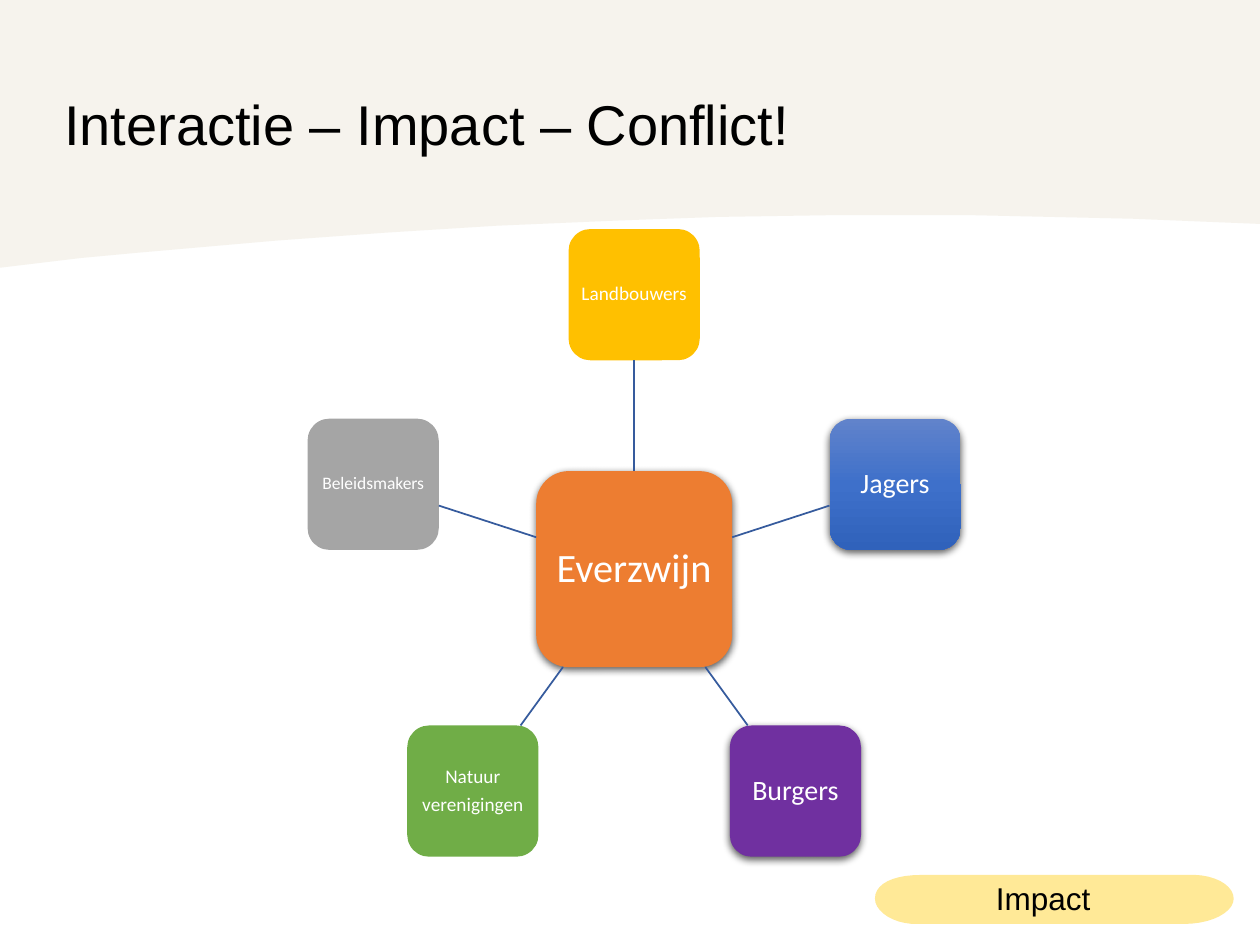
import copy
import math
from dataclasses import dataclass
from typing import Optional

import pptx
import pptx.dml.color
import pptx.enum.shapes
import pptx.enum.text
import pptx.oxml
import pptx.oxml.ns
import pptx.util

Pt = pptx.util.Pt
Point = tuple[float, float]
MIDDLE = pptx.enum.text.MSO_ANCHOR.MIDDLE


@dataclass(frozen=True)
class Theme:
    heading_font: str = "Arial"
    node_font: str = "Calibri"
    ink: str = "000000"
    node_ink: str = "FFFFFF"
    banner: str = "F6F3ED"
    badge: str = "FFE997"
    link: str = "365B9D"
    title_size: float = 32
    badge_size: float = 18
    hub_size: float = 23
    large: float = 16
    small: float = 11
    tiny: float = 10


@dataclass(frozen=True)
class Node:
    text: str
    fills: tuple[str, ...]  # one colour, or the stops of a vertical gradient
    text_size: float
    shadow: bool = False
    side: float = 75
    inset: float = 2


THEME = Theme()
CENTER: Point = (362.4, 325.2)
RADIUS = 156.8
HUB = Node("Everzwijn", ("ED7D31",), THEME.hub_size, True, side=112, inset=4)
NODES = (  # clockwise from the top
    Node("Landbouwers", ("FFC000",), THEME.small),
    Node("Jagers", ("6183CB", "3E70CA", "3062BB"), THEME.large, True),
    Node("Burgers", ("7030A0",), THEME.large, True),
    Node("Natuur\nverenigingen", ("70AD47",), THEME.small),
    Node("Beleidsmakers", ("A5A5A5",), THEME.tiny),
)
BANNER: list[Point] = [
    (0, 0), (720, 0), (720, 128), (647, 125), (556, 123), (474, 123),
    (410, 124), (354, 126), (284, 129), (220, 133), (158, 137.5),
    (78, 144.5), (46, 147.5), (0, 153),
]
BADGE_LEFT = (
    ((525, 528), (511, 528.5), (500, 521), (500, 513.5)),
    ((500, 513.5), (500, 505), (510.5, 500), (526, 500)),
)
BADGE_RIGHT = (
    ((678, 500), (693, 499), (705, 505.5), (705, 513.5)),
    ((705, 513.5), (705, 521), (693, 528), (676, 528)),
)


def rgb(color: str) -> pptx.dml.color.RGBColor:
    return pptx.dml.color.RGBColor.from_string(color)


def format_runs(p, size: float, font: str, color: str) -> None:
    for r in p.runs:
        r.font.size = Pt(size)
        r.font.name = font
        r.font.color.rgb = rgb(color)


def bezier(a: Point, b: Point, c: Point, d: Point, steps: int = 10) -> list[Point]:
    """Sample a cubic curve from a to d."""
    points = []
    for i in range(steps + 1):
        t = i / steps
        u = 1 - t
        weights = (u**3, 3 * u * u * t, 3 * u * t * t, t**3)
        points.append(tuple(sum(w * q[k] for w, q in zip(weights, (a, b, c, d)))
                            for k in (0, 1)))
    return points


def draw_outline(shapes, points: list[Point], color: str) -> None:
    corners = [(Pt(x), Pt(y)) for x, y in points]
    builder = shapes.build_freeform(*corners[0])
    builder.add_line_segments(corners[1:], close=True)
    sp = builder.convert_to_shape()
    sp.shadow.inherit = False
    sp.fill.solid()
    sp.fill.fore_color.rgb = rgb(color)
    sp.line.fill.background()


def fill_gradient(sp, colors: tuple[str, ...]) -> None:
    """Spread the colours evenly from top to bottom."""
    sp.fill.gradient()
    sp.fill.gradient_angle = 270
    stops = sp._element.spPr.find(".//" + pptx.oxml.ns.qn("a:gsLst"))
    while len(stops) < len(colors):
        stops.append(copy.deepcopy(stops[0]))
    for i, (stop, color) in enumerate(zip(sp.fill.gradient_stops, colors)):
        stop.color.rgb = rgb(color)
        stop.position = i / (len(colors) - 1)


def add_shadow(sp) -> None:
    effects = sp._element.spPr.find(pptx.oxml.ns.qn("a:effectLst"))
    effects.append(pptx.oxml.parse_xml(
        f'<a:outerShdw {pptx.oxml.ns.nsdecls("a")} blurRad="{Pt(4.5)}" '
        f'dist="{Pt(1.5)}" dir="5400000" algn="ctr" rotWithShape="0">'
        '<a:srgbClr val="000000"><a:alpha val="63000"/></a:srgbClr></a:outerShdw>'))


def draw_node(shapes, node: Node, center: Point):
    x, y = (v - node.side / 2 for v in center)
    sp = shapes.add_shape(pptx.enum.shapes.MSO_SHAPE.ROUNDED_RECTANGLE,
                          Pt(x), Pt(y), Pt(node.side), Pt(node.side))
    sp.shadow.inherit = False
    sp.line.fill.background()
    if len(node.fills) > 1:
        fill_gradient(sp, node.fills)
    else:
        sp.fill.solid()
        sp.fill.fore_color.rgb = rgb(node.fills[0])
    if node.shadow:
        add_shadow(sp)
    tf = sp.text_frame
    tf.text = node.text
    tf.word_wrap = True
    tf.vertical_anchor = MIDDLE
    tf.margin_left = tf.margin_right = tf.margin_top = tf.margin_bottom = Pt(node.inset)
    for p in tf.paragraphs:
        p.alignment = pptx.enum.text.PP_ALIGN.CENTER
        p.line_spacing = 0.9
        p.space_after = Pt(0.35 * node.text_size)
        format_runs(p, node.text_size, THEME.node_font, THEME.node_ink)
    return sp


def draw_link(shapes, angle: float, joined: Optional[tuple] = None) -> None:
    """Link the edge of the hub to the edge of the node at this angle."""
    dx, dy = math.cos(angle), math.sin(angle)
    reach = 0.5 / max(abs(dx), abs(dy))
    start, end = HUB.side * reach, RADIUS - NODES[0].side * reach
    ends = [Pt(c + d * q) for d in (start, end) for c, q in zip(CENTER, (dx, dy))]
    link = shapes.add_connector(pptx.enum.shapes.MSO_CONNECTOR.STRAIGHT, *ends)
    if joined:
        hub, node = joined
        link.begin_connect(hub, 0)
        link.end_connect(node, 2)
    link.line.color.rgb = rgb(THEME.link)
    link.line.width = Pt(1)
    link._element.spPr.append(pptx.oxml.parse_xml(
        f'<a:effectLst {pptx.oxml.ns.nsdecls("a")}/>'))


def place_text(sp, text: str, box: tuple[float, ...], size: float) -> None:
    sp.left, sp.top, sp.width, sp.height = (Pt(v) for v in box)
    tf = sp.text_frame
    tf.text = text
    tf.word_wrap = True
    tf.vertical_anchor = MIDDLE
    p = tf.paragraphs[0]
    p.alignment = pptx.enum.text.PP_ALIGN.LEFT
    format_runs(p, size, THEME.heading_font, THEME.ink)


def main() -> None:
    prs = pptx.Presentation()
    prs.slide_width, prs.slide_height = Pt(720), Pt(540)
    s = prs.slides.add_slide(prs.slide_layouts[5])
    shapes = s.shapes

    draw_outline(shapes, BANNER, THEME.banner)
    badge = [q for curve in BADGE_LEFT + BADGE_RIGHT for q in bezier(*curve)]
    draw_outline(shapes, badge, THEME.badge)

    title = shapes.title
    shapes._spTree.append(title._element)  # in front of the banner
    place_text(title, "Interactie – Impact – Conflict!", (29.5, 47.5, 494, 46),
               THEME.title_size)
    label = shapes.add_textbox(0, 0, 0, 0)
    place_text(label, "Impact", (562, 498.5, 143, 29), THEME.badge_size)

    hub = draw_node(shapes, HUB, CENTER)
    for i, node in enumerate(NODES):
        angle = math.radians(-90 + i * 360 / len(NODES))
        sp = draw_node(shapes, node, (CENTER[0] + RADIUS * math.cos(angle),
                                      CENTER[1] + RADIUS * math.sin(angle)))
        draw_link(shapes, angle, (hub, sp) if i == 0 else None)

    prs.save("out.pptx")


if __name__ == "__main__":
    main()
